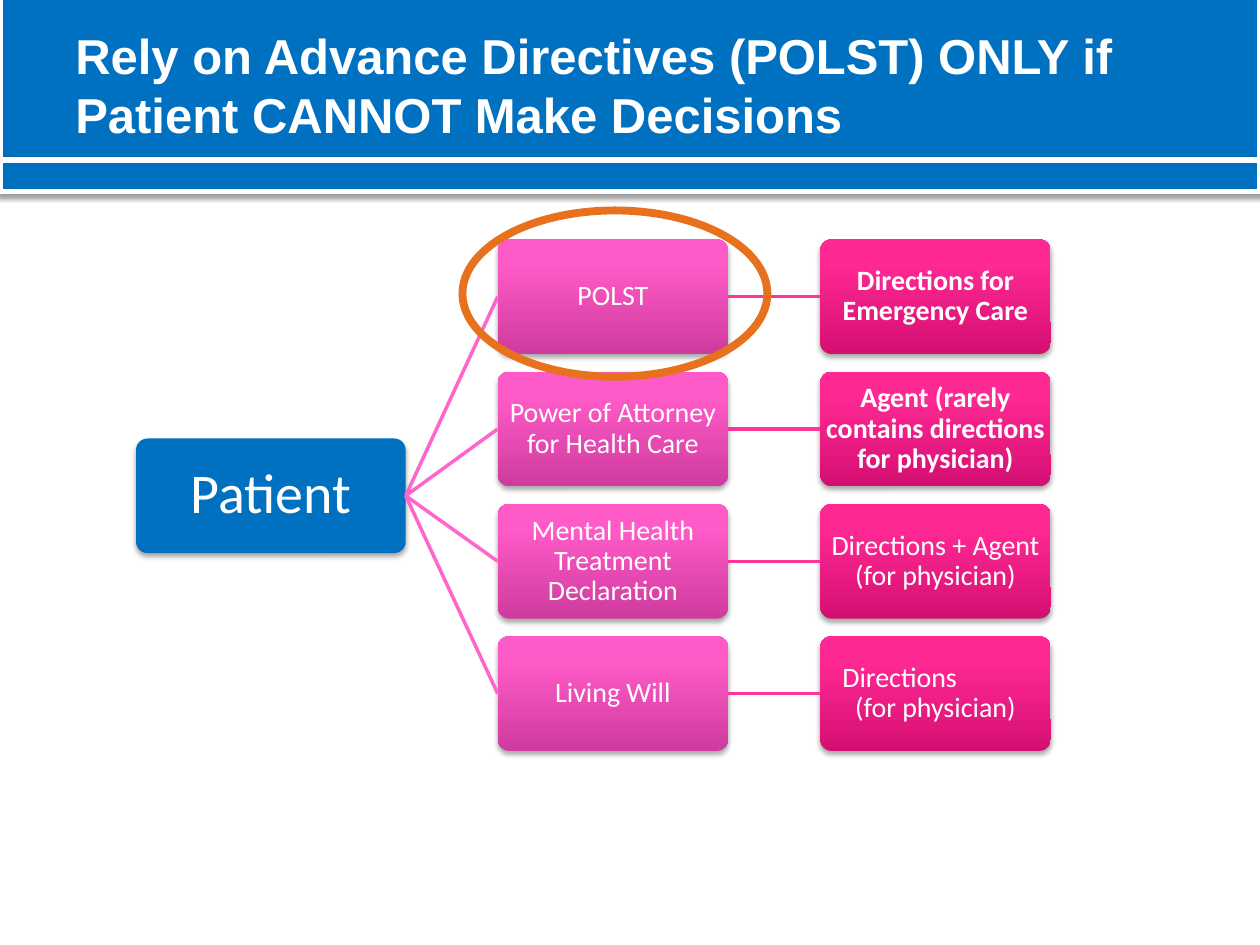
"""Build a slide on when to rely on advance directives."""
from dataclasses import dataclass

from lxml import etree
from pptx import Presentation
from pptx import util as u
from pptx.dml.color import RGBColor
from pptx.enum import shapes, text
from pptx.oxml import parse_xml
from pptx.oxml.ns import nsdecls, qn


@dataclass(frozen=True)
class Theme:
    blue: str = "0070C0"
    white: str = "FFFFFF"
    branch_line: str = "FF66CC"
    outcome_line: str = "FF3399"
    highlight: str = "E7711C"
    document_fill: tuple = ((0, "CF3B9E"), (80, "FF5BC8"), (100, "FF5DC9"))
    outcome_fill: tuple = ((0, "D50F72"), (80, "FF2994"), (100, "FF2B95"))
    title_font: str = "Arial"
    body_font: str = "Calibri"
    title_size: int = 28
    patient_size: int = 32
    body_size: int = 16


@dataclass(frozen=True)
class Frame:
    left: float
    top: float
    width: float
    height: float

    def lengths(self) -> tuple:
        return tuple(u.Inches(v) for v in (self.left, self.top, self.width, self.height))


@dataclass(frozen=True)
class Directive:
    document: str
    outcome: tuple
    bold: bool = False
    first_indent: float = 0


THEME = Theme()
DIRECTIVES = (
    Directive("POLST", ("Directions for Emergency Care",), True),
    Directive("Power of Attorney for Health Care",
              ("Agent (rarely contains directions for physician)",), True),
    Directive("Mental Health Treatment Declaration", ("Directions + Agent (for physician)",)),
    Directive("Living Will", ("Directions", "(for physician)"), first_indent=0.14),
)
BOX_HEIGHT, BOX_WIDTH = 0.91, 1.83
FIRST_TOP, ROW_STEP = 1.9, 1.05
DOCUMENT_LEFT, OUTCOME_LEFT = 3.95, 6.51


def rgb(value: str) -> RGBColor:
    return RGBColor.from_string(value)


def add_shadow(shape, opacity: int, distance: float) -> None:
    shape._element.spPr.append(parse_xml(
        f'<a:effectLst {nsdecls("a")}><a:outerShdw blurRad="{u.Pt(3.1)}" '
        f'dist="{u.Pt(distance)}" dir="5400000" rotWithShape="0"><a:srgbClr val="000000">'
        f'<a:alpha val="{opacity * 1000}"/></a:srgbClr></a:outerShdw></a:effectLst>'))


def fill_gradient(shape, stops: tuple) -> None:
    marks = "".join(f'<a:gs pos="{pos * 1000}"><a:srgbClr val="{color}"/></a:gs>'
                    for pos, color in stops)
    shape._element.spPr.find(qn("a:prstGeom")).addnext(parse_xml(
        f'<a:gradFill {nsdecls("a")} rotWithShape="1"><a:gsLst>{marks}</a:gsLst>'
        '<a:lin ang="16200000" scaled="0"/></a:gradFill>'))


def write(shape, lines: tuple, font: str, size: int, bold: bool, inset: dict,
          align, spacing: float = 1, first_indent: float = 0) -> None:
    body = shape.text_frame
    frame_format = {"word_wrap": True, "vertical_anchor": text.MSO_ANCHOR.MIDDLE, **inset}
    for name, value in frame_format.items():
        setattr(body, name, value)
    body.text = "\n".join(lines)
    for paragraph in body.paragraphs:
        paragraph.alignment, paragraph.line_spacing = align, spacing
        run_font = paragraph.runs[0].font
        for name, value in {"name": font, "size": u.Pt(size), "bold": bold}.items():
            setattr(run_font, name, value)
        run_font.color.rgb = rgb(THEME.white)
    if first_indent:
        opening = body.paragraphs[0]
        opening.alignment = text.PP_ALIGN.LEFT
        opening._p.get_or_add_pPr().set("marL", str(u.Inches(first_indent)))


def add_banner(slide, frame: Frame) -> None:
    banner = slide.shapes.add_shape(shapes.MSO_SHAPE.RECTANGLE, *frame.lengths())
    banner.fill.solid()
    banner.fill.fore_color.rgb = rgb(THEME.blue)
    banner.line.color.rgb = rgb(THEME.white)
    banner.line.width = u.Pt(3)
    add_shadow(banner, 38, 1.6)


def add_box(slide, frame: Frame, fill, lines: tuple, size: int, inset: float = 0.01,
            bold: bool = False, first_indent: float = 0):
    box = slide.shapes.add_shape(shapes.MSO_SHAPE.ROUNDED_RECTANGLE, *frame.lengths())
    box.adjustments[0] = 0.1
    if isinstance(fill, str):
        box.fill.solid()
        box.fill.fore_color.rgb = rgb(fill)
    else:
        fill_gradient(box, fill)
    box.line.fill.background()
    add_shadow(box, 35, 1.8)
    margins = {f"margin_{side}": u.Inches(inset) for side in ("left", "top", "right", "bottom")}
    write(box, lines, THEME.body_font, size, bold, margins, text.PP_ALIGN.CENTER, 0.9,
          first_indent)
    return box


def join(slide, source, target, color: str) -> None:
    link = slide.shapes.add_connector(shapes.MSO_CONNECTOR.STRAIGHT, 0, 0, 0, 0)
    link.begin_connect(source, 3)
    link.end_connect(target, 1)
    link.line.color.rgb = rgb(color)
    link.line.width = u.Pt(2)
    etree.SubElement(link._element.spPr, qn("a:effectLst"))


def main() -> None:
    deck = Presentation()
    deck.slide_width, deck.slide_height = u.Inches(10), u.Inches(7.5)
    slide = deck.slides.add_slide(deck.slide_layouts[6])

    add_banner(slide, Frame(0, -0.05, 10, 1.32))
    add_banner(slide, Frame(0, 1.27, 10, 0.25))
    title = slide.shapes.add_textbox(*Frame(0.5, 0.09, 9, 1.16).lengths())
    write(title, ("Rely on Advance Directives (POLST) ONLY if Patient CANNOT Make Decisions",),
          THEME.title_font, THEME.title_size, True, {}, text.PP_ALIGN.LEFT)

    patient = add_box(slide, Frame(1.08, 3.48, 2.14, BOX_HEIGHT), THEME.blue, ("Patient",),
                      THEME.patient_size, 0.02)
    for row, directive in enumerate(DIRECTIVES):
        top = FIRST_TOP + row * ROW_STEP
        document = add_box(slide, Frame(DOCUMENT_LEFT, top, BOX_WIDTH, BOX_HEIGHT),
                           THEME.document_fill, (directive.document,), THEME.body_size)
        outcome = add_box(slide, Frame(OUTCOME_LEFT, top, BOX_WIDTH, BOX_HEIGHT),
                          THEME.outcome_fill, directive.outcome, THEME.body_size,
                          bold=directive.bold, first_indent=directive.first_indent)
        join(slide, patient, document, THEME.branch_line)
        join(slide, document, outcome, THEME.outcome_line)

    highlight = slide.shapes.add_shape(shapes.MSO_SHAPE.OVAL,
                                       *Frame(3.67, 1.67, 2.42, 1.32).lengths())
    highlight.fill.background()
    highlight.line.color.rgb = rgb(THEME.highlight)
    highlight.line.width = u.Pt(4.5)
    highlight.shadow.inherit = False
    deck.save("out.pptx")


if __name__ == "__main__":
    main()
